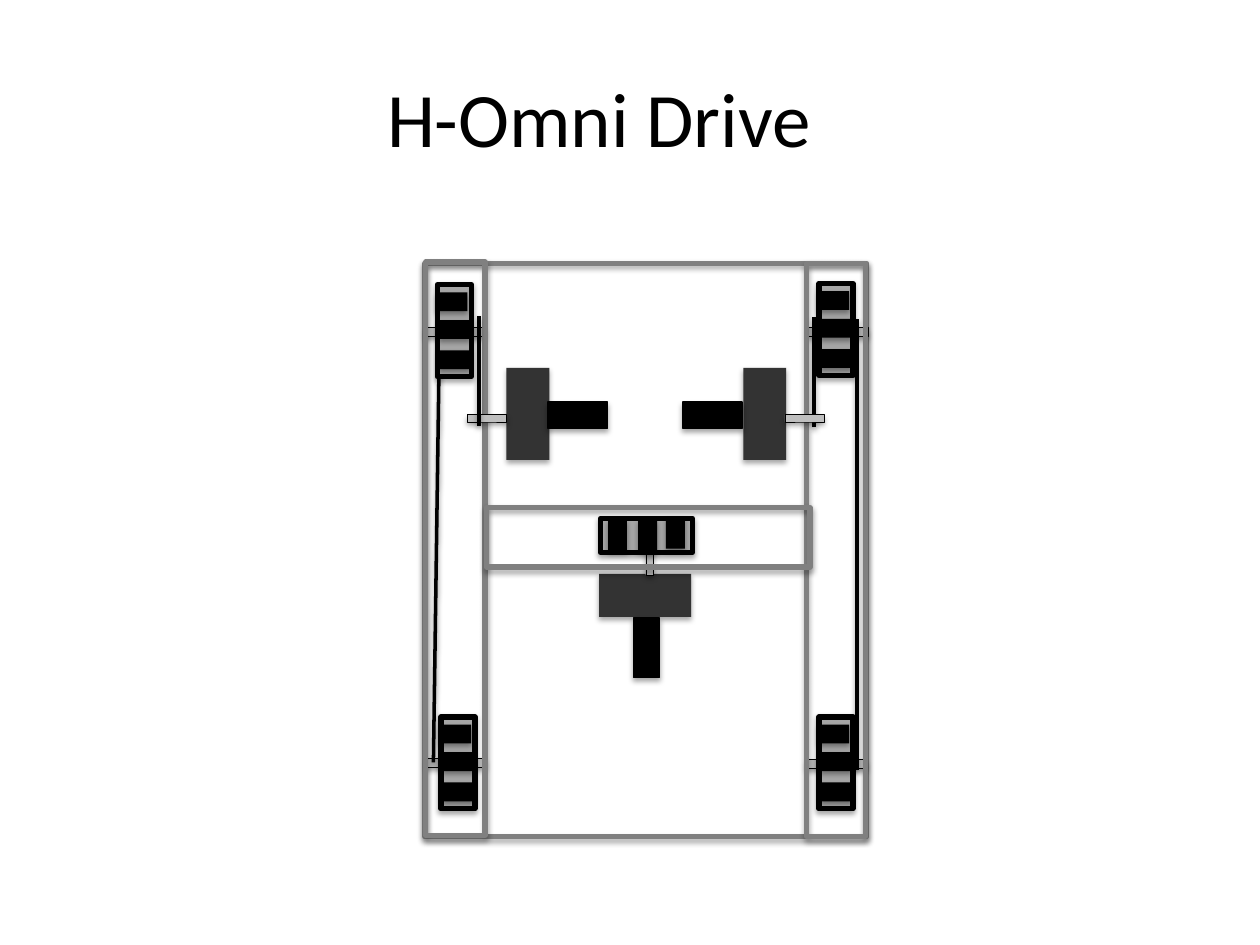
"""Build the H-Omni Drive chassis slide."""
import lxml.etree
import pptx
import pptx.dml.color
import pptx.enum.shapes
import pptx.enum.text
import pptx.oxml.ns
import pptx.util

PX = 9144
COLORS = {"black": "000000", "frame": "808080", "shaft": "BFBFBF",
          "gearbox": "333333", "tire": "A6A6A6"}


def px(length):
    return pptx.util.Emu(length * PX)


def color(name):
    return pptx.dml.color.RGBColor.from_string(COLORS[name])


def write(frame, text, size=44, font="Calibri", ink="black"):
    frame.word_wrap = True
    frame.vertical_anchor = pptx.enum.text.MSO_ANCHOR.MIDDLE
    para = frame.paragraphs[0]
    para.alignment = pptx.enum.text.PP_ALIGN.CENTER
    span = para.add_run()
    span.text = text
    span.font.size = pptx.util.Pt(size)
    span.font.name = font
    span.font.color.rgb = color(ink)


def cast_shadow(effects, opacity, distance):
    qn = pptx.oxml.ns.qn
    shadow = lxml.etree.SubElement(
        effects, qn("a:outerShdw"), blurRad=str(pptx.util.Pt(3.1)),
        dist=str(pptx.util.Pt(distance)), dir="5400000", rotWithShape="0")
    ink = lxml.etree.SubElement(shadow, qn("a:srgbClr"), val=COLORS["black"])
    lxml.etree.SubElement(ink, qn("a:alpha"), val=str(opacity * 1000))


class Drawing:
    def __init__(self, page):
        self.page = page

    def title(self, text, left, top, width, height):
        box = self.page.shapes.title
        box.left, box.top = px(left), px(top)
        box.width, box.height = px(width), px(height)
        write(box.text_frame, text)

    def block(self, left, top, width, height, fill=None, line=None, weight=0.25,
              parent=None):
        shapes = (parent or self.page).shapes
        box = shapes.add_shape(pptx.enum.shapes.MSO_SHAPE.RECTANGLE,
                               px(left), px(top), px(width), px(height))
        if fill:
            box.fill.solid()
            box.fill.fore_color.rgb = color(fill)
        else:
            box.fill.background()
        if line:
            box.line.color.rgb = color(line)
            box.line.width = pptx.util.Pt(weight)
        else:
            box.line.fill.background()
        box.shadow.inherit = False
        effects = box.element.spPr.find(pptx.oxml.ns.qn("a:effectLst"))
        cast_shadow(effects, 35, 1.8)

    def frame(self, left, top, width, height):
        self.block(left, top, width, height, line="frame", weight=3)

    def axle(self, left, top):
        self.block(left, top, 48, 7, fill="shaft", line="black")

    def belt(self, x1, y1, x2, y2):
        belt = self.page.shapes.add_connector(
            pptx.enum.shapes.MSO_CONNECTOR.STRAIGHT, px(x1), px(y1), px(x2), px(y2))
        belt.line.color.rgb = color("black")
        belt.line.width = pptx.util.Pt(2)
        effects = lxml.etree.SubElement(
            belt.element.spPr, pptx.oxml.ns.qn("a:effectLst"))
        cast_shadow(effects, 38, 1.6)

    def motor(self, left, top, shaft=33, body=-48, rotation=0):
        group = self.page.shapes.add_group_shape()
        self.block(left, top, 34, 73, fill="gearbox", parent=group)
        self.block(left + shaft, top + 37, 31, 6, fill="shaft", line="black",
                   parent=group)
        self.block(left + body, top + 27, 47, 21, fill="black", line="black",
                   weight=0.75, parent=group)
        group.rotation = rotation

    def wheel(self, left, top, rotation=0):
        group = self.page.shapes.add_group_shape()
        self.block(left, top, 27, 73, fill="tire", line="black", weight=3,
                   parent=group)
        for across, down in ((1, 28), (1, 52), (-1, 6)):
            self.block(left + across, top + down, 25, 15, fill="black", parent=group)
        group.rotation = rotation


def main():
    deck = pptx.Presentation()
    deck.slide_width, deck.slide_height = px(1000), px(750)
    drawing = Drawing(deck.slides.add_slide(deck.slide_layouts[5]))
    drawing.title("H-Omni Drive", 191, 30, 569, 125)

    drawing.frame(337, 209, 351, 455)
    for left, top in ((640, 603), (641, 260), (338, 602), (337, 260)):
        drawing.axle(left, top)
    drawing.frame(640, 209, 47, 455)
    drawing.frame(338, 208, 47, 455)

    drawing.motor(402, 292, shaft=-31, body=33)
    for ends in ((646, 339, 646, 252), (680, 611, 680, 253),
                 (380, 338, 380, 251), (344, 605, 349, 252)):
        drawing.belt(*ends)
    drawing.motor(590, 292)
    for left, top in ((650, 225), (650, 569), (350, 569), (347, 226)):
        drawing.wheel(left, top)

    drawing.motor(504, 445, rotation=270)
    drawing.frame(386, 403, 257, 47)
    drawing.wheel(500, 388, rotation=90)
    deck.save("out.pptx")


if __name__ == "__main__":
    main()
